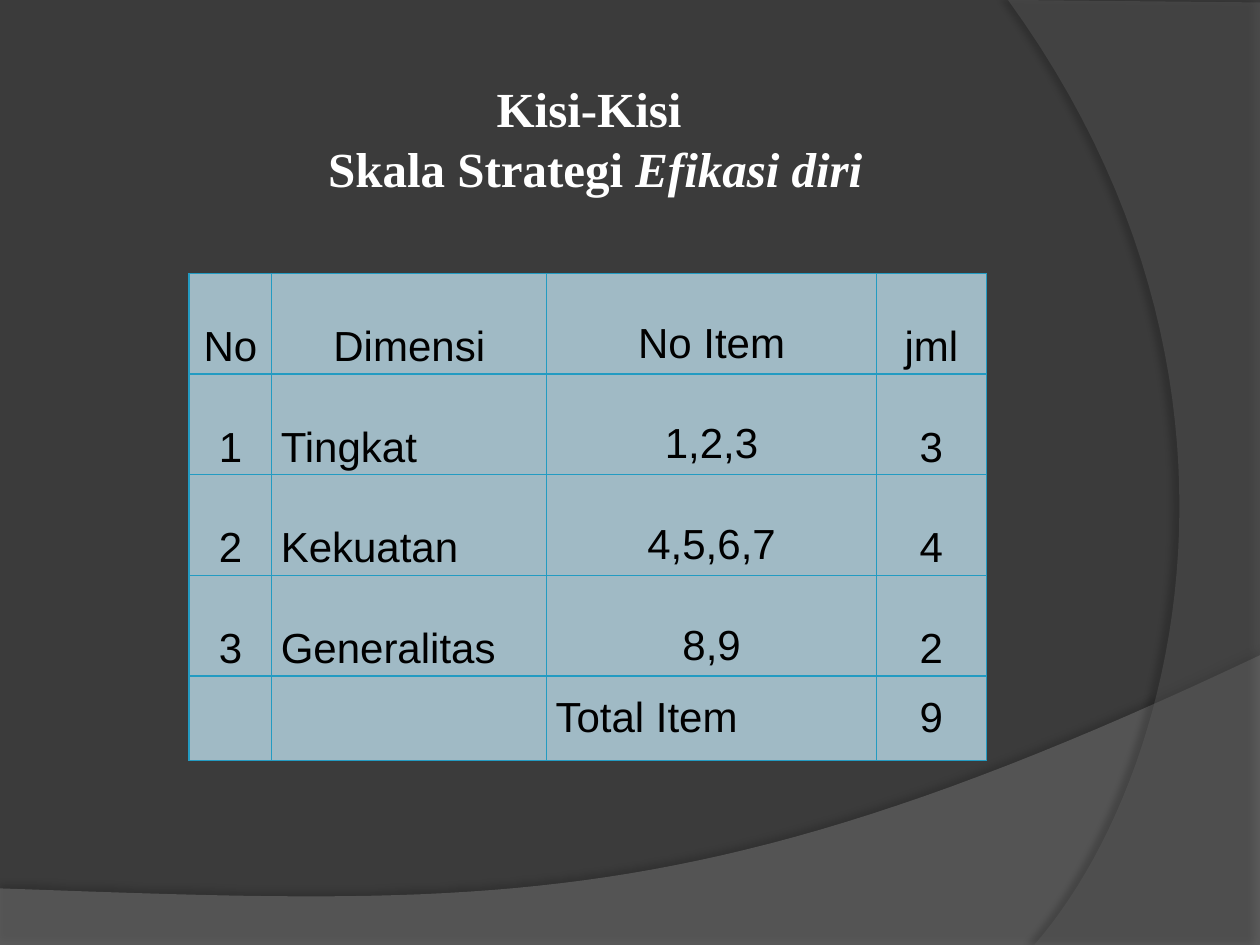
from dataclasses import dataclass
from typing import Any

import lxml.etree
import pptx
import pptx.dml.color
import pptx.enum.text
import pptx.oxml
import pptx.oxml.ns
import pptx.util

Cm = pptx.util.Cm
Pt = pptx.util.Pt
Align = pptx.enum.text.PP_ALIGN
Anchor = pptx.enum.text.MSO_ANCHOR
Point = tuple[float, float]

WIDTH, HEIGHT = 25.4, 19.05
BORDER, CELL_FILL = "239BC2", "A0BAC5"
COLUMN_WIDTHS = (1.67, 5.54, 6.65, 2.21)
ROW_HEIGHTS = (2.03, 2.03, 2.03, 2.03, 1.7)
ROWS = (
    ("No", "Dimensi", "No Item", "jml"),
    ("1", "Tingkat", "1,2,3", "3"),
    ("2", "Kekuatan", "4,5,6,7", "4"),
    ("3", "Generalitas", "8,9", "2"),
    ("", "", "Total Item", "9"),
)
TITLE_LINES = (
    (("Kisi-Kisi ", False),),
    (("Skala Strategi ", False), ("Efikasi diri", True)),
)


@dataclass
class Wave:
    corners: tuple[Point, ...]
    curve: tuple[Point, Point, Point]
    fill: str
    opacity: int
    shadow_opacity: int
    shadow_distance: float
    shadow_angle: int


WAVES = (
    Wave(((0, 17.91), (0, HEIGHT), (WIDTH, HEIGHT), (WIDTH, 13.21)),
         ((14.2, 18.52), (9.93, 18.26), (0, 17.91)), "7F7F7F", 45, 35, 3.5, 270),
    Wave(((WIDTH, 0.05), (WIDTH, HEIGHT), (20.85, HEIGHT)),
         ((23.75, 15.72), (25.86, 7.62), (20.32, 0)), "5E5E5E", 40, 45, 4, 180),
)


def color(value: str) -> pptx.dml.color.RGBColor:
    return pptx.dml.color.RGBColor.from_string(value)


def apply(target: Any, values: dict[str, Any]) -> None:
    for name, value in values.items():
        setattr(target, name, value)


def xml(markup: str) -> Any:
    namespace = pptx.oxml.ns.nsdecls("a")
    return pptx.oxml.parse_xml(markup.replace(" ", f" {namespace} ", 1))


def curve_points(start: Point, curve: tuple[Point, Point, Point], steps: int = 48) -> list[Point]:
    points = []
    for step in range(1, steps + 1):
        t = step / steps
        weights = ((1 - t) ** 3, 3 * t * (1 - t) ** 2, 3 * t * t * (1 - t), t ** 3)
        x, y = (sum(w * p[axis] for w, p in zip(weights, (start, *curve))) for axis in (0, 1))
        points.append((x, y))
    return points


def draw_wave(page: Any, wave: Wave) -> None:
    outline = [*wave.corners, *curve_points(wave.corners[-1], wave.curve)]
    points = [(Cm(x), Cm(y)) for x, y in outline]
    builder = page.shapes.build_freeform(*points[0])
    builder.add_line_segments(points[1:], close=True)
    shape = builder.convert_to_shape()
    shape.fill.solid()
    shape.fill.fore_color.rgb = color(wave.fill)
    shape.line.fill.background()
    fill_color = shape.element.spPr.find(".//" + pptx.oxml.ns.qn("a:srgbClr"))
    lxml.etree.SubElement(fill_color, pptx.oxml.ns.qn("a:alpha"), val=str(wave.opacity * 1000))
    shape.element.spPr.append(xml(
        f'<a:effectLst ><a:outerShdw blurRad="{Pt(4)}" dist="{Pt(wave.shadow_distance)}" '
        f'dir="{wave.shadow_angle * 60000}" rotWithShape="0"><a:srgbClr val="000000">'
        f'<a:alpha val="{wave.shadow_opacity * 1000}"/></a:srgbClr></a:outerShdw></a:effectLst>'))


def write_title(page: Any) -> None:
    title = page.shapes.title
    apply(title, {"left": Cm(6.55), "top": Cm(1.57), "width": Cm(10.9), "height": Cm(3.18)})
    box = title.text_frame
    apply(box, {"word_wrap": False, "auto_size": pptx.enum.text.MSO_AUTO_SIZE.NONE,
                "vertical_anchor": Anchor.TOP, "margin_left": 0, "margin_right": 0,
                "margin_top": 0, "margin_bottom": 0})
    for index, line in enumerate(TITLE_LINES):
        para = box.add_paragraph() if index else box.paragraphs[0]
        apply(para, {"alignment": Align.CENTER, "line_spacing": Pt(34)})
        for text, italic in line:
            span = para.add_run()
            span.text = text
            apply(span.font, {"name": "Times New Roman", "size": Pt(28), "bold": True,
                              "italic": italic})
            span.font.color.rgb = color("FFFFFF")
    title.element.getparent().append(title.element)


def style_cell(cell: Any, text: str, align: Any, anchor: Any, spacing: float) -> None:
    apply(cell, {"vertical_anchor": anchor, "margin_left": Cm(0.18), "margin_right": Cm(0.18),
                 "margin_top": 0, "margin_bottom": 0})
    properties = cell._tc.get_or_add_tcPr()
    for side in "LRTB":
        properties.append(xml(
            f'<a:ln{side} w="{Pt(0.75)}"><a:solidFill><a:srgbClr val="{BORDER}"/>'
            f'</a:solidFill></a:ln{side}>'))
    cell.fill.solid()
    cell.fill.fore_color.rgb = color(CELL_FILL)
    para = cell.text_frame.paragraphs[0]
    apply(para, {"alignment": align, "line_spacing": spacing})
    if text:
        span = para.add_run()
        span.text = text
        apply(span.font, {"name": "Arial", "size": Pt(24), "bold": False})
        span.font.color.rgb = color("000000")


def draw_table(page: Any) -> None:
    table = page.shapes.add_table(len(ROWS), len(COLUMN_WIDTHS), Cm(3.81), Cm(5.51),
                                  Cm(sum(COLUMN_WIDTHS)), Cm(sum(ROW_HEIGHTS))).table
    apply(table, {"first_row": False, "horz_banding": False})
    for column, width in zip(table.columns, COLUMN_WIDTHS):
        column.width = Cm(width)
    for row, height in zip(table.rows, ROW_HEIGHTS):
        row.height = Cm(height)
    last = len(ROWS) - 1
    for r, texts in enumerate(ROWS):
        for c, text in enumerate(texts):
            is_label = (c == 1 and r > 0) or (c == 2 and r == last)
            is_top = c == 2 and r < last
            style_cell(table.cell(r, c), text, Align.LEFT if is_label else Align.CENTER,
                       Anchor.TOP if is_top else Anchor.MIDDLE, 1.0 if r == last else 2.0)


def main() -> None:
    deck = pptx.Presentation()
    apply(deck, {"slide_width": Cm(WIDTH), "slide_height": Cm(HEIGHT)})
    page = deck.slides.add_slide(deck.slide_layouts[5])
    page.background.fill.solid()
    page.background.fill.fore_color.rgb = color("3B3B3B")
    for wave in WAVES:
        draw_wave(page, wave)
    write_title(page)
    draw_table(page)
    deck.save("out.pptx")


if __name__ == "__main__":
    main()
